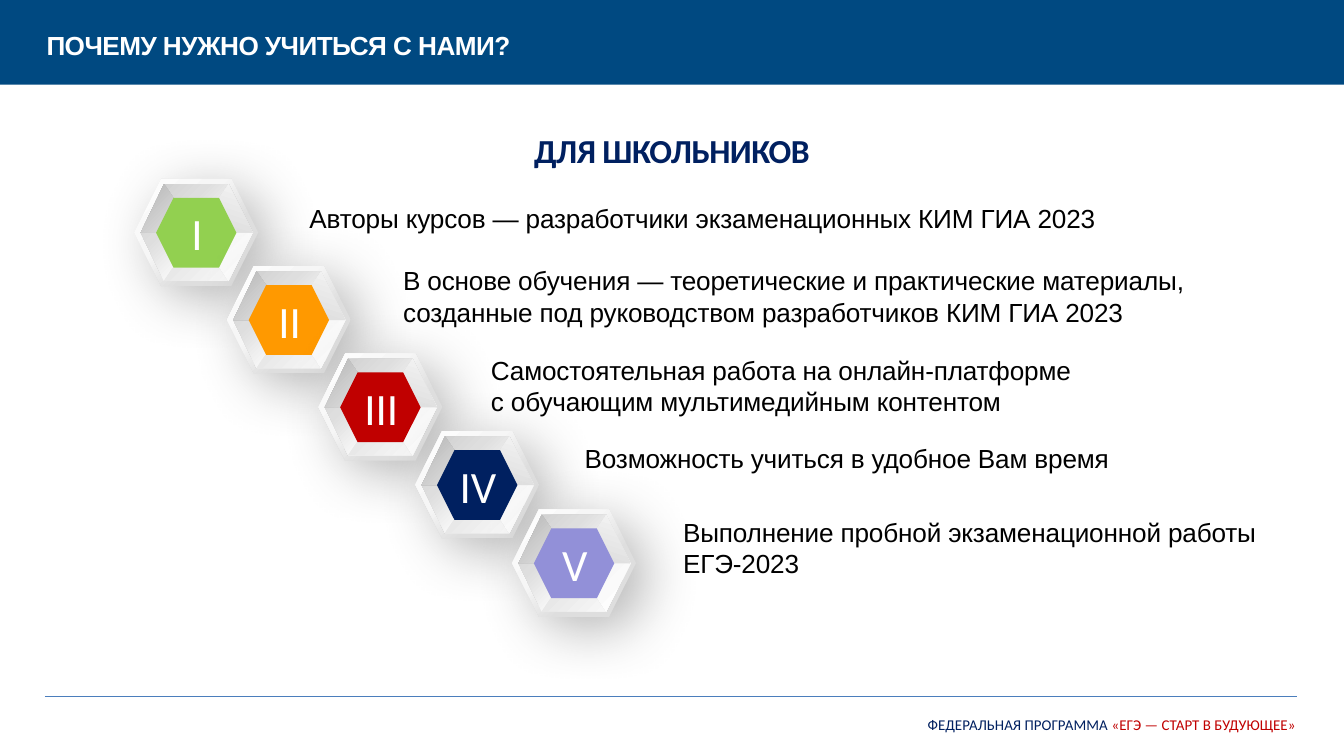
from lxml.etree import SubElement
from pptx import Presentation
from pptx.dml.color import RGBColor
from pptx.enum.shapes import MSO_CONNECTOR, MSO_SHAPE
from pptx.enum.text import PP_ALIGN
from pptx.oxml.ns import qn
from pptx.util import Cm, Pt

HUES = {
    "band": "004981", "navy": "002060", "red": "C00000", "rule": "4B7EBC",
    "white": "FFFFFF", "black": "000000", "green": "92D050",
    "orange": "FF9900", "lilac": "9290D8", "shade": "696969",
}
FADES = {
    "base": (225, [(17, "DEDEDE"), (37, "E0E0E0"), (61, "F6F6F6"), (100, "FFFFFF")]),
    "ring": (45, [(0, "CBCBCB"), (32, "DEDEDE"), (57, "F5F5F5"), (100, "FFFFFF")]),
    "foot": (45, [(0, "E6E6E6"), (100, "F7F7F7")]),
    "right": (288, [(0, "DEDEDE"), (100, "F4F4F4")]),
    "left": (45, [(0, "B4B4B4"), (100, "DFDFDF")]),
}
RIM = [(0.56, 0.1), (1.78, 0.1), (2.24, 1.02), (1.78, 1.93), (0.56, 1.93), (0.12, 1.02)]
HOLE = [(0.74, 0.36), (0.41, 1.02), (0.74, 1.68), (1.6, 1.68), (1.93, 1.02), (1.6, 0.36)]
RIGHT = [RIM[1], HOLE[5], HOLE[4], RIM[2]]
LEFT = [RIM[0], HOLE[0], HOLE[1], RIM[5]]

BODY = {"size": Pt(14), "name": "Arial"}
HEAD = {"size": Pt(14), "name": "Arial", "bold": True}
TITLE = {"size": Pt(18), "name": "Calibri", "bold": True}
MARK = {"size": Pt(24), "name": "Calibri"}
FOOT = {"size": Pt(8), "name": "Calibri"}

STEPS = [
    ("I", "green", (2.54, 3.38), (5.16, 3.71, 20.45, 0.86),
     "Авторы курсов — разработчики экзаменационных КИМ ГИА 2023"),
    ("II", "orange", (4.29, 5.03), (6.93, 4.88, 17.25, 1.45),
     "В основе обучения — теоретические и практические материалы, "
     "созданные под руководством разработчиков КИМ ГИА 2023"),
    ("III", "red", (6.02, 6.68), (8.59, 6.57, 15.93, 1.45),
     "Самостоятельная работа на онлайн-платформе\nс обучающим мультимедийным контентом"),
    ("IV", "navy", (7.85, 8.15), (10.36, 8.23, 11.86, 0.86),
     "Возможность учиться в удобное Вам время"),
    ("V", "lilac", (9.68, 9.63), (12.22, 9.63, 11.99, 1.45),
     "Выполнение пробной экзаменационной работы\nЕГЭ-2023"),
]


def tint(name):
    """Return the named colour."""
    return RGBColor.from_string(HUES[name])


def paint(shape, hue):
    """Give a shape a plain fill, no line and no shadow."""
    shape.shadow.inherit = False
    shape.line.fill.background()
    shape.fill.solid()
    shape.fill.fore_color.rgb = tint(hue)


def fade(shape, name):
    """Give a shape a named gradient fill."""
    paint(shape, "white")
    angle, stops = FADES[name]
    old = shape._element.spPr.find(qn("a:solidFill"))
    grad = old.makeelement(qn("a:gradFill"), {"rotWithShape": "1"})
    items = SubElement(grad, qn("a:gsLst"))
    for place, code in stops:
        stop = SubElement(items, qn("a:gs"), pos=str(place * 1000))
        SubElement(stop, qn("a:srgbClr"), val=code)
    SubElement(grad, qn("a:lin"), ang=str(angle * 60000), scaled="0")
    old.getparent().replace(old, grad)


def shade(shape):
    """Give a shape a soft shadow to the lower right."""
    glow = shape._element.spPr.find(qn("a:effectLst"))
    cast = SubElement(glow, qn("a:outerShdw"), blurRad=str(Pt(30)), dist=str(Pt(10)),
                      dir=str(40 * 60000), algn="tl", rotWithShape="0")
    tone = SubElement(cast, qn("a:srgbClr"), val=HUES["shade"])
    SubElement(tone, qn("a:alpha"), val="47000")


def form(shapes, kind, x, y, wide, high):
    """Add a preset shape."""
    return shapes.add_shape(kind, Cm(x), Cm(y), Cm(wide), Cm(high))


def trace(shapes, x, y, *loops):
    """Add a closed outline made of one or more loops."""
    loops = [[(Cm(x + dx), Cm(y + dy)) for dx, dy in loop] for loop in loops]
    pen = shapes.build_freeform(*loops[0][0])
    pen.add_line_segments(loops[0][1:], close=True)
    for loop in loops[1:]:
        pen.move_to(*loop[0])
        pen.add_line_segments(loop[1:], close=True)
    return pen.convert_to_shape()


def write(shapes, spot, parts, font, align=PP_ALIGN.LEFT, inset=None, dent=0, track=0):
    """Add a text box whose parts are pairs of text and colour."""
    box = shapes.add_textbox(*map(Cm, spot))
    frame = box.text_frame
    frame.word_wrap = True
    if inset is not None:
        for side in ("left", "right", "top", "bottom"):
            setattr(frame, f"margin_{side}", Cm(inset))
    para = frame.paragraphs[0]
    para.alignment = align
    para._p.get_or_add_pPr().set("marL", str(Cm(dent)))
    for text, hue in parts:
        for count, line in enumerate(text.split("\n")):
            if count:
                para.add_line_break()
            run = para.add_run()
            run.text = line
            for key, value in font.items():
                setattr(run.font, key, value)
            run.font.color.rgb = tint(hue)
            run._r.get_or_add_rPr().set("spc", str(track))


def badge(slide, x, y, mark, hue):
    """Add one raised hexagon with its numeral."""
    shapes = slide.shapes.add_group_shape().shapes
    base = form(shapes, MSO_SHAPE.HEXAGON, x, y, 2.34, 2.03)
    fade(base, "base")
    shade(base)
    fade(trace(shapes, x, y, RIM, HOLE), "ring")
    foot = form(shapes, MSO_SHAPE.TRAPEZOID, x + 0.56, y + 1.68, 1.2, 0.25)
    foot.adjustments[0] = 0.66
    fade(foot, "foot")
    fade(trace(shapes, x, y, RIGHT), "right")
    fade(trace(shapes, x, y, LEFT), "left")
    paint(form(shapes, MSO_SHAPE.HEXAGON, x + 0.41, y + 0.36, 1.52, 1.32), hue)
    write(shapes, (x + 0.4, y + 0.39, 1.57, 1.27), [(mark, "white")], MARK, PP_ALIGN.CENTER)


def rule(shapes):
    """Add the thin line above the footer."""
    line = shapes.add_connector(MSO_CONNECTOR.STRAIGHT, Cm(0.85), Cm(13.16), Cm(24.51), Cm(13.16))
    line.line.color.rgb = tint("rule")
    line.line.width = Pt(0.75)
    SubElement(line._element.spPr, qn("a:effectLst"))


def main():
    """Build the slide and save it."""
    deck = Presentation()
    deck.slide_width, deck.slide_height = Cm(25.4), Cm(14.29)
    slide = deck.slides.add_slide(deck.slide_layouts[6])
    shapes = slide.shapes
    paint(form(shapes, MSO_SHAPE.RECTANGLE, 0, 0, 25.4, 1.6), "band")
    write(shapes, (0.85, 0.55, 22.02, 0.6), [("ПОЧЕМУ НУЖНО УЧИТЬСЯ С НАМИ?", "white")],
          HEAD, inset=0, dent=0.03, track=-30)
    write(shapes, (6.35, 2.34, 12.7, 1.02), [("ДЛЯ ШКОЛЬНИКОВ", "navy")],
          TITLE, PP_ALIGN.CENTER, track=-30)
    for mark, hue, spot, _, _ in STEPS:
        badge(slide, *spot, mark, hue)
    for _, _, _, area, text in STEPS:
        write(shapes, area, [(text, "black")], BODY, dent=0.44, track=-10)
    rule(shapes)
    write(shapes, (15.42, 13.41, 9.32, 0.61),
          [("ФЕДЕРАЛЬНАЯ ПРОГРАММА ", "navy"), ("«ЕГЭ — СТАРТ В БУДУЮЩЕЕ»", "red")],
          FOOT, PP_ALIGN.RIGHT)
    deck.save("out.pptx")


if __name__ == "__main__":
    main()
